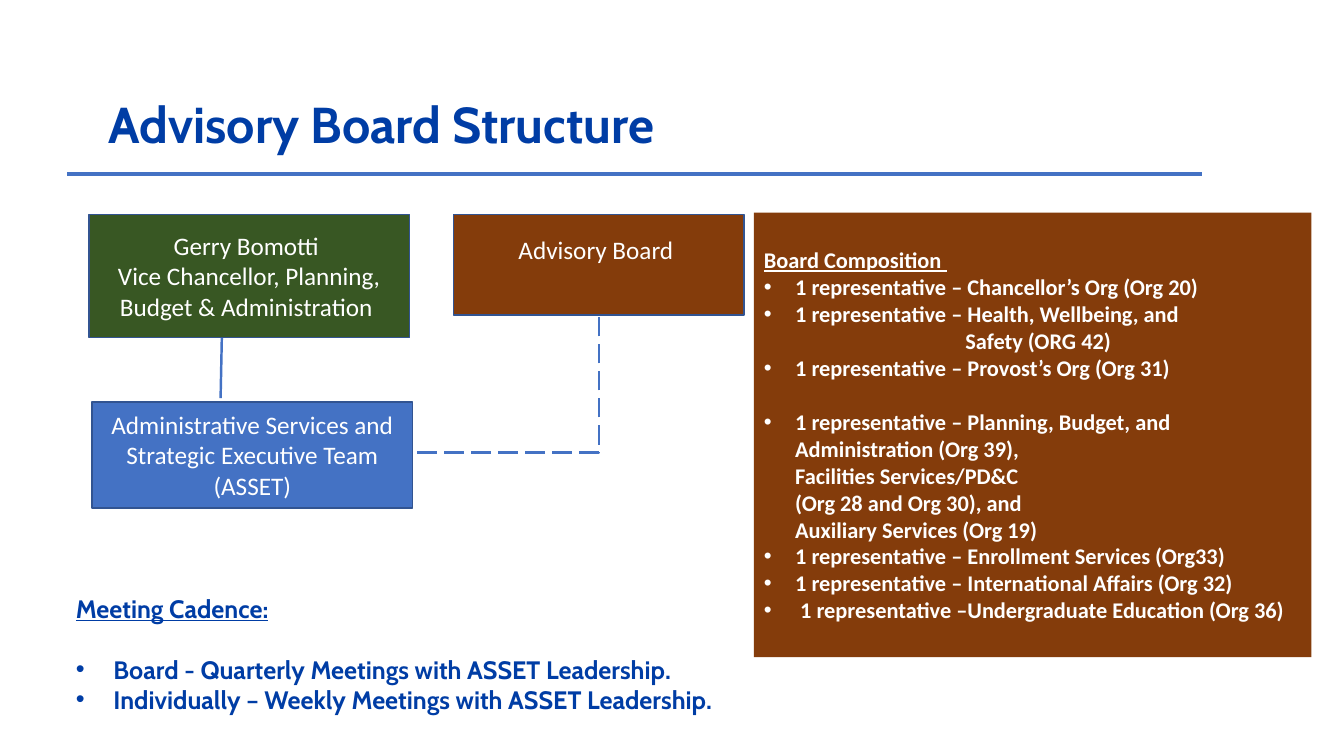
from lxml.etree import SubElement
from pptx import Presentation
from pptx.dml.color import RGBColor as Rgb
from pptx.enum.dml import MSO_LINE as Dash
from pptx.enum.shapes import MSO_CONNECTOR as Connector, MSO_SHAPE as Preset
from pptx.enum.text import MSO_ANCHOR as Anchor, PP_ALIGN as Align
from pptx.oxml.ns import qn
from pptx.util import Cm, Pt

COLORS = {
    "title": "003DA5",
    "blue": "4472C4",
    "outline": "325491",
    "green": "385723",
    "brown": "843C0B",
    "white": "FFFFFF",
}
HEADING = {"name": "Cabin", "size": Pt(36), "bold": True}
CADENCE = {"name": "Cabin", "size": Pt(18), "bold": True}
BOX = {"name": "Calibri", "size": Pt(18)}
COMPOSITION = {"name": "Calibri", "size": Pt(16), "bold": True}


class SlideBuilder:
    def __init__(self, presentation, colors):
        self.colors = colors
        self.slide = presentation.slides.add_slide(presentation.slide_layouts[6])

    def color(self, name):
        return Rgb.from_string(self.colors[name])

    def paragraphs(self, frame, items, font, color, align=Align.LEFT):
        for index, item in enumerate(items):
            paragraph = frame.paragraphs[0] if index == 0 else frame.add_paragraph()
            item = {"text": item} if isinstance(item, str) else item
            paragraph.text = item["text"]
            paragraph.alignment = align
            paragraph.space_before = Pt(item.get("before", 0))
            for run in paragraph.runs:
                for key, value in {**font, **item.get("font", {})}.items():
                    setattr(run.font, key, value)
                run.font.color.rgb = self.color(color)
            properties = paragraph._p.get_or_add_pPr()
            if "margin" in item:
                properties.set("marL", str(Cm(item["margin"])))
            if "bullet" in item:
                properties.set("marL", str(Cm(item["bullet"])))
                properties.set("indent", str(-Cm(item["bullet"])))
                SubElement(properties, qn("a:buFont"), typeface="Arial")
                SubElement(properties, qn("a:buChar"), char="•")

    def text(self, place, items, font, inset=None):
        shape = self.slide.shapes.add_textbox(*map(Cm, place))
        frame = shape.text_frame
        frame.word_wrap = True
        if inset is not None:
            for side in ("left", "top", "right", "bottom"):
                setattr(frame, f"margin_{side}", Cm(inset))
        self.paragraphs(frame, items, font, "title")

    def box(self, place, fill, items, font, outline=True, align=Align.CENTER, bottom=0.13):
        shape = self.slide.shapes.add_shape(Preset.RECTANGLE, *map(Cm, place))
        shape.shadow.inherit = False
        shape.fill.solid()
        shape.fill.fore_color.rgb = self.color(fill)
        if outline:
            shape.line.color.rgb = self.color("outline")
            shape.line.width = Pt(1)
        else:
            shape.line.fill.background()
        frame = shape.text_frame
        settings = {"word_wrap": True, "vertical_anchor": Anchor.MIDDLE, "margin_bottom": Cm(bottom)}
        for key, value in settings.items():
            setattr(frame, key, value)
        self.paragraphs(frame, items, font, "white", align)

    def line(self, points, width, dash=None, bent=False):
        kind = Connector.ELBOW if bent else Connector.STRAIGHT
        shape = self.slide.shapes.add_connector(kind, *map(Cm, points))
        shape.line.color.rgb = self.color("blue")
        shape.line.width = Pt(width)
        if dash:
            shape.line.dash_style = dash
        properties = shape._element.spPr
        if bent:
            properties.find(qn("a:prstGeom")).set("prst", "bentConnector2")
        SubElement(properties, qn("a:effectLst"))


def bullet(text, indent, **extra):
    return {"text": text, "bullet": indent, **extra}


def representative(text, **extra):
    return bullet(f"1 representative – {text}", 0.79, **extra)


def main():
    presentation = Presentation()
    presentation.slide_width = Cm(33.87)
    presentation.slide_height = Cm(19.05)
    builder = SlideBuilder(presentation, COLORS)

    builder.text((2.49, 2.21, 19.91, 1.8), ["Advisory Board Structure"], HEADING)
    builder.line((1.7, 4.38, 30.28, 4.38), 3)

    builder.box((2.32, 10.13, 8.08, 2.67), "blue",
                ["Administrative Services and Strategic Executive Team (ASSET)"], BOX)
    builder.line((5.56, 10.03, 5.59, 8.51), 1.75)
    builder.box((2.24, 5.4, 8.08, 3.1), "green",
                ["Gerry Bomotti ", "Vice Chancellor, Planning, Budget & Administration "], BOX)
    builder.box((11.43, 5.4, 7.32, 2.54), "brown", ["Advisory Board "], BOX, bottom=0.9)
    builder.line((9.83, 11.4, 15.09, 7.94), 1.75, Dash.LONG_DASH, bent=True)

    composition = [
        {"text": "Board Composition ", "font": {"underline": True}},
        representative("Chancellor’s Org (Org 20)"),
        representative("Health, Wellbeing, and"),
        {"text": "Safety (ORG 42)", "margin": 5.08},
        representative("Provost’s Org (Org 31)"),
        representative("Planning, Budget, and\vAdministration (Org 39),\vFacilities Services/PD&C\v"
                       "(Org 28 and Org 30), and\vAuxiliary Services (Org 19)", before=19.5),
        representative("Enrollment Services (Org33)"),
        representative("International Affairs (Org 32)"),
        bullet(" 1 representative –Undergraduate Education (Org 36)", 0.79),
    ]
    builder.box((19, 5.36, 14.05, 11.2), "brown", composition, COMPOSITION,
                outline=False, align=Align.LEFT)

    cadence = [
        {"text": "Meeting Cadence:", "font": {"underline": True}},
        bullet("Board - Quarterly Meetings with ASSET Leadership.", 0.95, before=22),
        bullet("Individually – Weekly Meetings with ASSET Leadership.", 0.95),
    ]
    builder.text((1.91, 14.94, 17.98, 3.07), cadence, CADENCE, inset=0)

    presentation.save("out.pptx")


if __name__ == "__main__":
    main()
